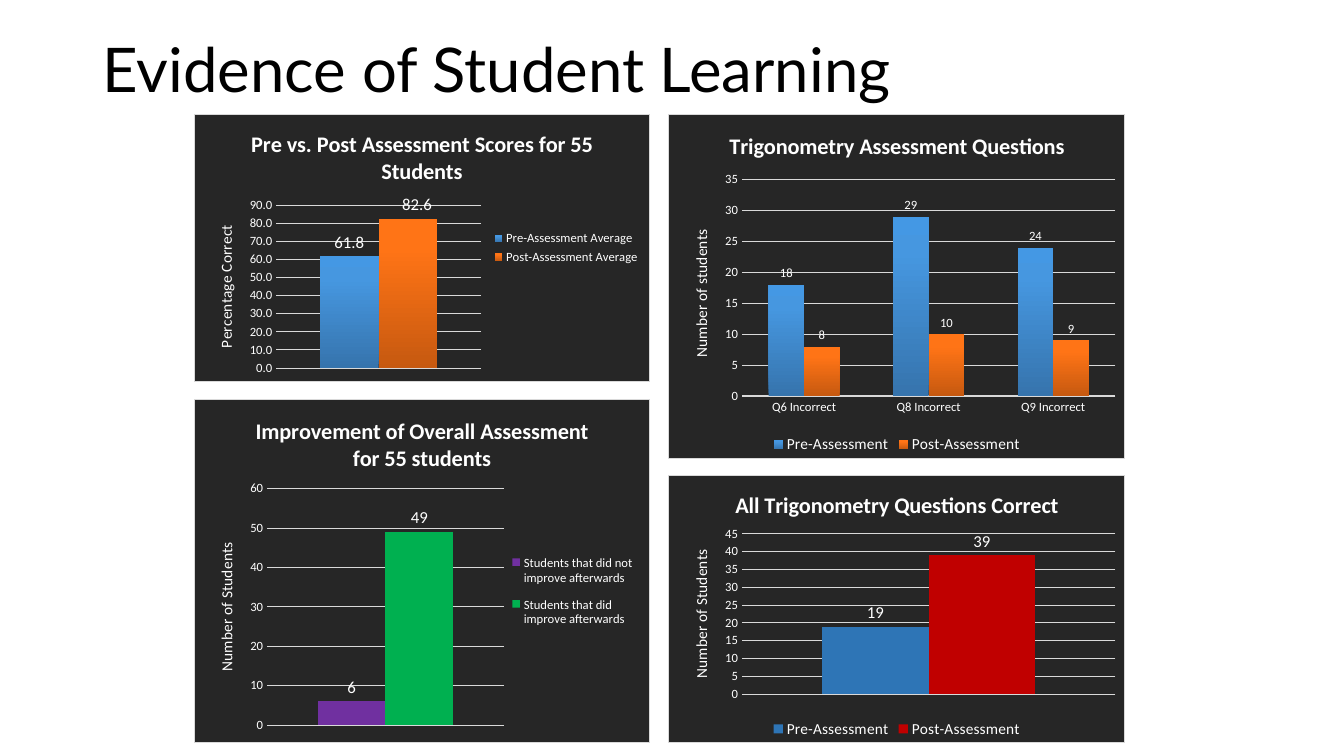
from copy import deepcopy
from dataclasses import dataclass
from typing import Optional, Union

from lxml import etree
from pptx import Presentation
from pptx.chart.data import CategoryChartData
from pptx.dml.color import RGBColor
from pptx.enum import chart as ch, text as tx
from pptx.oxml import parse_xml
from pptx.oxml.ns import nsdecls, qn
from pptx.util import Inches, Pt

BLACK = RGBColor(0x00, 0x00, 0x00)
WHITE = RGBColor(0xFF, 0xFF, 0xFF)
PANEL = RGBColor(0x26, 0x26, 0x26)
GRID = RGBColor(0xD9, 0xD9, 0xD9)
PURPLE = RGBColor(0x70, 0x30, 0xA0)
GREEN = RGBColor(0x00, 0xB0, 0x50)
BLUE = RGBColor(0x2E, 0x75, 0xB6)
RED = RGBColor(0xC0, 0x00, 0x00)
BLUE_FADE = (RGBColor(0x36, 0x74, 0xAD), RGBColor(0x46, 0x97, 0xE0), RGBColor(0x44, 0x98, 0xE4))
ORANGE_FADE = (RGBColor(0xC6, 0x59, 0x10), RGBColor(0xFF, 0x74, 0x16), RGBColor(0xFF, 0x75, 0x17))
FADE_POSITIONS = (0, 0.8, 1)

LEFT_COLUMN, RIGHT_COLUMN = 1.92, 6.63
TOP, BOTTOM, PANEL_WIDTH = 1.13, 7.37, 4.53
RIGHT, BELOW = ch.XL_LEGEND_POSITION.RIGHT, ch.XL_LEGEND_POSITION.BOTTOM


@dataclass
class Measure:
    name: str
    values: tuple[float, ...]
    paint: Union[RGBColor, tuple[RGBColor, ...]]
    label_shift: float = 0


@dataclass
class Panel:
    """One chart; plot and legend boxes are fractions of its area."""
    title: str
    axis_title: str
    left: float
    top: float
    height: float
    plot: tuple[float, ...]
    axis_max: float
    axis_step: float
    legend: ch.XL_LEGEND_POSITION
    measures: tuple[Measure, ...]
    categories: tuple[str, ...] = ("1",)
    label_size: float = 12
    number_format: str = "General"
    legend_box: Optional[tuple[float, ...]] = None


PANELS = (
    Panel("Pre vs. Post Assessment Scores for 55 Students", "Percentage Correct",
          LEFT_COLUMN, TOP, 2.66, (0.18, 0.34, 0.45, 0.61), 90, 10, RIGHT,
          (Measure("Pre-Assessment Average", (61.8,), BLUE_FADE),
           Measure("Post-Assessment Average", (82.6,), ORANGE_FADE, label_shift=0.02)),
          number_format="0.0"),
    Panel("Improvement of Overall Assessment for 55 students", "Number of Students",
          LEFT_COLUMN, BOTTOM - 3.41, 3.41, (0.16, 0.26, 0.52, 0.69), 60, 10, RIGHT,
          (Measure("Students that did not improve afterwards", (6,), PURPLE),
           Measure("Students that did improve afterwards", (49,), GREEN)),
          legend_box=(0.68, 0.42, 0.3, 0.28)),
    Panel("Trigonometry Assessment Questions", "Number of students",
          RIGHT_COLUMN, TOP, 3.42, (0.16, 0.19, 0.82, 0.63), 35, 5, BELOW,
          (Measure("Pre-Assessment", (18, 29, 24), BLUE_FADE),
           Measure("Post-Assessment", (8, 10, 9), ORANGE_FADE)),
          categories=("Q6 Incorrect", "Q8 Incorrect", "Q9 Incorrect"), label_size=9),
    Panel("All Trigonometry Questions Correct", "Number of Students",
          RIGHT_COLUMN, BOTTOM - 2.66, 2.66, (0.16, 0.22, 0.82, 0.6), 45, 5, BELOW,
          (Measure("Pre-Assessment", (19,), BLUE),
           Measure("Post-Assessment", (39,), RED))),
)


def style_font(font, size: float, color: RGBColor = WHITE, name: str = "Calibri",
               bold: bool = False) -> None:
    font.size, font.name, font.bold = Pt(size), name, bold
    font.color.rgb = color


def set_title(title, wording: str, size: float, bold: bool = False) -> None:
    title.text_frame.text = wording
    style_font(title.text_frame.paragraphs[0].runs[0].font, size, bold=bold)


def set_layout(parent, index: int, box: tuple[float, ...], inner: bool = False) -> None:
    """Fix a chart part's place; a two-value box is an offset only."""
    for old in parent.findall(qn("c:layout")):
        parent.remove(old)
    layout = etree.Element(qn("c:layout"))
    manual = etree.SubElement(layout, qn("c:manualLayout"))
    settings = [("layoutTarget", "inner")] if inner else []
    if len(box) == 4:
        settings += [("xMode", "edge"), ("yMode", "edge")]
    settings += zip("xywh", box)
    for tag, value in settings:
        etree.SubElement(manual, qn(f"c:{tag}")).set("val", str(value))
    parent.insert(index, layout)


def paint_background(chart_space) -> None:
    chart_space.find(qn("c:chart")).addnext(parse_xml(
        f'<c:spPr {nsdecls("c", "a")}><a:solidFill><a:srgbClr val="{PANEL}"/></a:solidFill>'
        f'<a:ln w="{Pt(0.75)}"><a:solidFill><a:srgbClr val="{GRID}"/></a:solidFill></a:ln></c:spPr>'))


def style_series(series, measure: Measure, label_size: float) -> None:
    fill = series.format.fill
    if isinstance(measure.paint, RGBColor):
        fill.solid()
        fill.fore_color.rgb = measure.paint
    else:
        fill.gradient()
        fill.gradient_angle = 90
        stops = series._element.find(".//" + qn("a:gsLst"))
        stops.append(deepcopy(stops[-1]))
        for stop, color, position in zip(fill.gradient_stops, measure.paint, FADE_POSITIONS):
            stop.color.rgb, stop.position = color, position
    series.invert_if_negative = False
    labels = series.data_labels
    labels.show_value = True
    labels.position = ch.XL_LABEL_POSITION.OUTSIDE_END
    style_font(labels.font, label_size)
    if measure.label_shift:
        label = series.points[0].data_label
        style_font(label.font, label_size)
        label.position = ch.XL_LABEL_POSITION.OUTSIDE_END
        set_layout(series._element.find(".//" + qn("c:dLbl")), 1, (measure.label_shift, 0))


def style_axes(chart, panel: Panel) -> None:
    values, categories = chart.value_axis, chart.category_axis
    values.minimum_scale, values.maximum_scale = 0, panel.axis_max
    values.major_unit = panel.axis_step
    values.format.line.fill.background()
    grid = values.major_gridlines.format.line
    grid.color.rgb, grid.width = GRID, Pt(0.75)
    set_title(values.axis_title, panel.axis_title, 11)
    values.axis_title._element.find(".//" + qn("a:bodyPr")).set("rot", "-5400000")
    categories.format.line.color.rgb = GRID
    categories.format.line.width = Pt(1)
    categories.visible = len(panel.categories) > 1
    for axis in (values, categories):
        axis.major_tick_mark = axis.minor_tick_mark = ch.XL_TICK_MARK.NONE
        style_font(axis.tick_labels.font, 9)


def add_panel(slide, panel: Panel) -> None:
    data = CategoryChartData(number_format=panel.number_format)
    data.categories = panel.categories
    for measure in panel.measures:
        data.add_series(measure.name, measure.values)
    chart = slide.shapes.add_chart(
        ch.XL_CHART_TYPE.COLUMN_CLUSTERED, Inches(panel.left), Inches(panel.top),
        Inches(PANEL_WIDTH), Inches(panel.height), data).chart
    style_font(chart.font, 10)
    paint_background(chart._chartSpace)
    set_title(chart.chart_title, panel.title, 16, bold=True)
    chart.chart_title.include_in_layout = False

    plot = chart.plots[0]
    plot.gap_width, plot.overlap, plot.vary_by_categories = 150, 0, False
    for series, measure in zip(plot.series, panel.measures):
        style_series(series, measure, panel.label_size)
    style_axes(chart, panel)
    set_layout(chart._chartSpace.find(".//" + qn("c:plotArea")), 0, panel.plot, inner=True)

    chart.has_legend = True
    chart.legend.position = panel.legend
    chart.legend.include_in_layout = False
    style_font(chart.legend.font, 9 if panel.legend == RIGHT else 11)
    if panel.legend_box:
        set_layout(chart.legend._element, 1, panel.legend_box)


def add_heading(slide, wording: str) -> None:
    frame = slide.shapes.add_textbox(
        Inches(0.92), Inches(-0.01), Inches(11.5), Inches(1.45)).text_frame
    frame.word_wrap = True
    frame.vertical_anchor = tx.MSO_ANCHOR.MIDDLE
    frame.text = wording
    heading = frame.paragraphs[0]
    heading.line_spacing = 0.9
    style_font(heading.runs[0].font, 44, BLACK, "Lato")


def main() -> None:
    deck = Presentation()
    deck.slide_width, deck.slide_height = Inches(13.33), Inches(7.5)
    slide = deck.slides.add_slide(deck.slide_layouts[6])
    add_heading(slide, "Evidence of Student Learning")
    for panel in PANELS:
        add_panel(slide, panel)
    deck.save("out.pptx")


if __name__ == "__main__":
    main()
